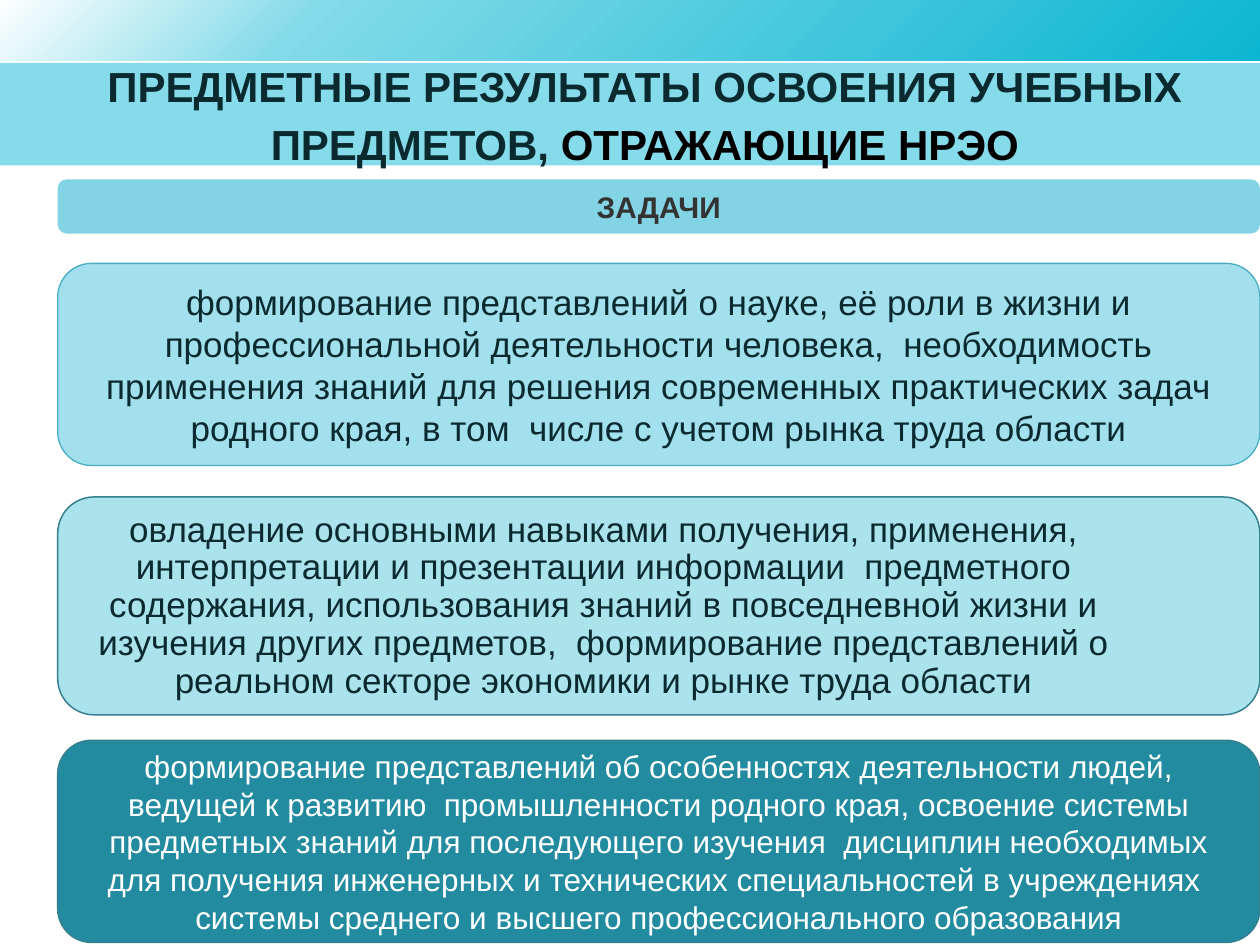
"""Build the slide on subject results and their three tasks."""
from dataclasses import dataclass

from lxml import etree
from pptx import Presentation
from pptx.dml.color import RGBColor as RGB
from pptx.enum.shapes import MSO_SHAPE as Shape
from pptx.enum.text import MSO_ANCHOR as Anchor, PP_ALIGN as Align
from pptx.oxml import parse_xml
from pptx.util import Pt


@dataclass(frozen=True)
class Theme:
    font: str = "Arial"
    dark: str = "0A2A30"
    black: str = "000000"
    white: str = "FFFFFF"
    grey: str = "333333"
    sky: str = "83DAE8"
    cyan: str = "0BB6D2"
    title_band: str = "85DBE9"
    heading_fill: str = "82D4E5"
    science_fill: str = "A1E0EC"
    science_line: str = "49AEC3"
    skills_fill: str = "ABE3ED"
    industry_fill: str = "228B9F"
    panel_line: str = "368190"
    title_size: int = 24
    heading_size: int = 17
    body_size: int = 20
    small_size: int = 18


theme = Theme()


def add_block(kind, left, top, width, height, fill, line=None, line_width=0.85):
    block = slide.shapes.add_shape(kind, Pt(left), Pt(top), Pt(width), Pt(height))
    block.shadow.inherit = False
    block.fill.solid()
    block.fill.fore_color.rgb = RGB.from_string(fill)
    if line:
        block.line.color.rgb = RGB.from_string(line)
        block.line.width = Pt(line_width)
    else:
        block.line.fill.background()
    return block


def set_text(frame, runs, size, bold, spacing, insets, anchor):
    frame.word_wrap = True
    frame.vertical_anchor = anchor
    frame.margin_left, frame.margin_top, frame.margin_right, frame.margin_bottom = map(Pt, insets)
    paragraph = frame.paragraphs[0]
    paragraph.alignment = Align.CENTER
    paragraph.line_spacing = spacing
    paragraph.space_before = Pt(0)
    paragraph.font.name = theme.font
    paragraph.font.size = Pt(size)
    paragraph.font.bold = bold
    for words, color in runs:
        run = paragraph.add_run()
        run.text = words
        run.font.color.rgb = RGB.from_string(color)


presentation = Presentation()
presentation.slide_width, presentation.slide_height = Pt(720), Pt(540)
slide = presentation.slides.add_slide(presentation.slide_layouts[5])

top_band = add_block(Shape.RECTANGLE, 0, -1.5, 720, 36, theme.sky)
stops = "".join(
    f'<a:gs pos="{position * 1000}"><a:srgbClr val="{color}"/></a:gs>'
    for position, color in ((0, theme.cyan), (75, theme.sky), (100, theme.white))
)
gradient = parse_xml(
    '<a:gradFill xmlns:a="http://schemas.openxmlformats.org/drawingml/2006/main" rotWithShape="1">'
    f'<a:gsLst>{stops}</a:gsLst><a:path path="circle">'
    '<a:fillToRect l="100000" t="100000"/></a:path></a:gradFill>'
)
solid = top_band.fill._xPr.solidFill if hasattr(top_band.fill._xPr, "solidFill") else top_band._element.spPr.find(
    etree.QName("http://schemas.openxmlformats.org/drawingml/2006/main", "solidFill"))
solid.getparent().replace(solid, gradient)
add_block(Shape.RECTANGLE, 0, 36, 720, 58.5, theme.title_band)

title = slide.shapes.title
slide.shapes._spTree.append(title._element)
title.left, title.top, title.width, title.height = Pt(0), Pt(26.5), Pt(720), Pt(72)
title_runs = [
    ("ПРЕДМЕТНЫЕ РЕЗУЛЬТАТЫ ОСВОЕНИЯ УЧЕБНЫХ ПРЕДМЕТОВ, ", theme.dark),
    ("ОТРАЖАЮЩИЕ НРЭО", theme.black),
]
set_text(title.text_frame, title_runs, theme.title_size, True, Pt(33), (17, 4, 0, 0), Anchor.TOP)

even_insets = (19, 0, 19, 0)
panels = [
    (102.5, 31, theme.heading_fill, None, 0, theme.grey, theme.heading_size, True, 1.0, even_insets,
     "ЗАДАЧИ"),
    (150.5, 115.5, theme.science_fill, theme.science_line, 0.75, theme.dark, theme.body_size, False,
     Pt(24), even_insets,
     "формирование представлений о науке, её роли в жизни и профессиональной деятельности человека,  "
     "необходимость применения знаний для решения современных практических задач родного края, "
     "в том  числе с учетом рынка труда области"),
    (284, 124.5, theme.skills_fill, theme.panel_line, 0.85, theme.dark, theme.body_size, False,
     Pt(21.6), (9, 0, 72, 0),
     "овладение основными навыками получения, применения, интерпретации и презентации информации  "
     "предметного содержания, использования знаний в повседневной жизни и изучения других предметов,  "
     "формирование представлений о реальном секторе экономики и рынке труда области"),
    (423, 115.5, theme.industry_fill, theme.panel_line, 0.85, theme.white, theme.small_size, False,
     Pt(21.6), even_insets,
     "формирование представлений об особенностях деятельности людей, ведущей к развитию  "
     "промышленности родного края, освоение системы предметных знаний для последующего изучения  "
     "дисциплин необходимых для получения инженерных и технических специальностей в учреждениях  "
     "системы среднего и высшего профессионального образования"),
]
for top, height, fill, line, line_width, color, size, bold, spacing, insets, words in panels:
    panel = add_block(Shape.ROUNDED_RECTANGLE, 33, top, 687, height, fill, line, line_width)
    set_text(panel.text_frame, [(words, color)], size, bold, spacing, insets, Anchor.MIDDLE)

presentation.save("out.pptx")
